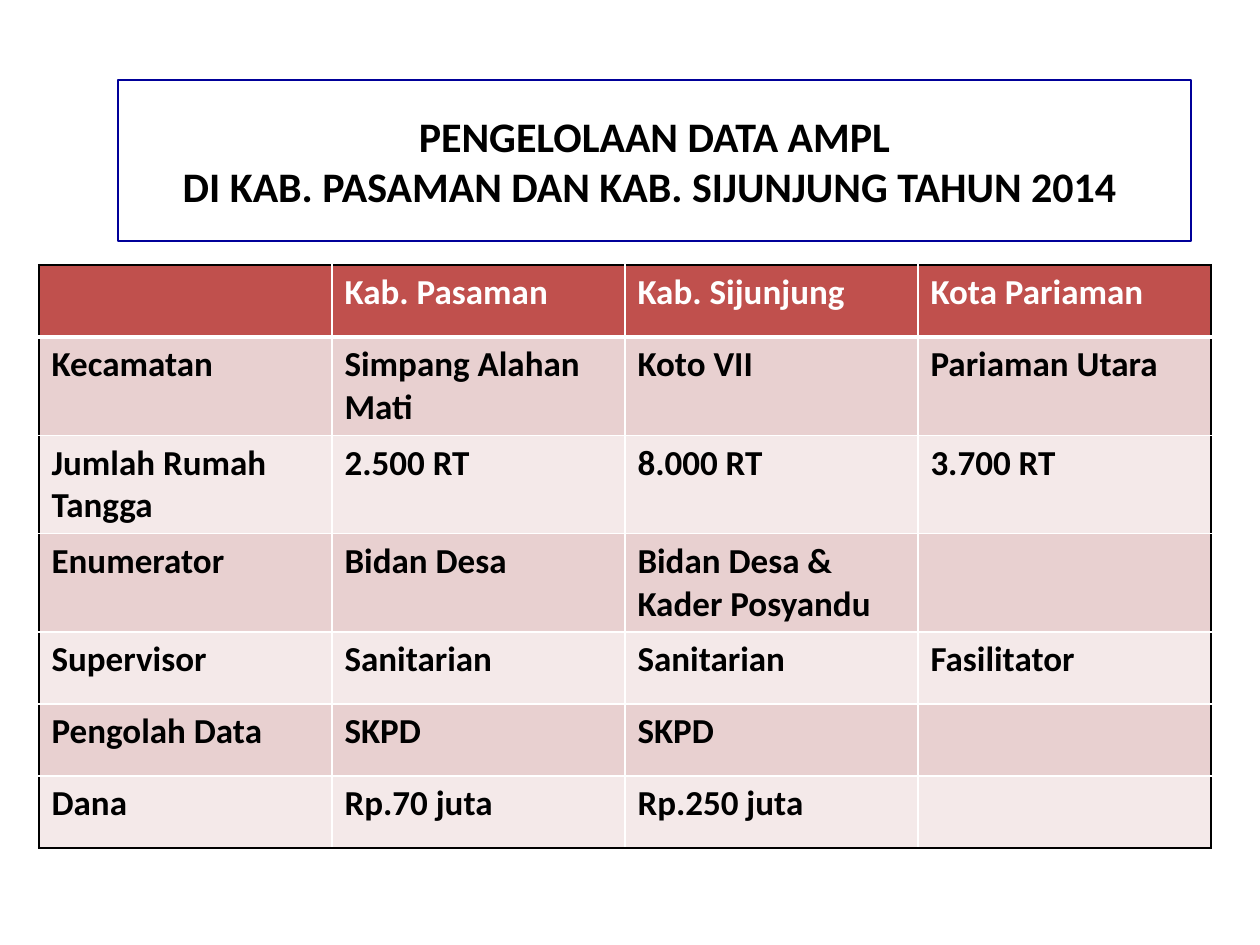
from dataclasses import dataclass

from pptx import Presentation
from pptx.dml.color import RGBColor
from pptx.enum.text import MSO_ANCHOR, MSO_AUTO_SIZE, PP_ALIGN
from pptx.oxml.ns import qn
from pptx.util import Emu, Pt
from lxml.etree import SubElement

EMU_PER_PX = 914400 / 126

WHITE = RGBColor(0xFF, 0xFF, 0xFF)
BLACK = RGBColor(0x00, 0x00, 0x00)
NAVY = RGBColor(0x00, 0x00, 0x99)
HEADER_RED = RGBColor(0xC0, 0x50, 0x4D)
DARK_BAND = RGBColor(0xE8, 0xD0, 0xD0)
LIGHT_BAND = RGBColor(0xF4, 0xE9, 0xE9)
FONT = "Calibri"

COLUMN_WIDTH = 293
TITLE_LINES = (
    "PENGELOLAAN DATA AMPL",
    "DI KAB. PASAMAN DAN KAB. SIJUNJUNG TAHUN 2014 ",
)


@dataclass(frozen=True)
class Row:
    texts: tuple[str, str, str, str]
    height: int = 72


@dataclass(frozen=True)
class Border:
    color: RGBColor
    points: float


ROWS = (
    Row(("", "Kab. Pasaman", "Kab. Sijunjung", "Kota Pariaman")),
    Row(("Kecamatan", "Simpang Alahan Mati", "Koto VII", "Pariaman Utara"), 77),
    Row(("Jumlah Rumah Tangga", "2.500 RT", "8.000 RT", "3.700 RT")),
    Row(("Enumerator", "Bidan Desa", "Bidan Desa & Kader Posyandu", "")),
    Row(("Supervisor", "Sanitarian", "Sanitarian", "Fasilitator")),
    Row(("Pengolah Data", "SKPD", "SKPD", "")),
    Row(("Dana", "Rp.70 juta", "Rp.250 juta", "")),
)

OUTER = Border(BLACK, 1.5)
INNER = Border(WHITE, 1)
HEADER_RULE = Border(WHITE, 3)


def px(length: int) -> Emu:
    return Emu(round(length * EMU_PER_PX))


def add_text(paragraph, text: str, size: int, color: RGBColor) -> None:
    run = paragraph.add_run()
    run.text = text
    run.font.name = FONT
    run.font.size = Pt(size)
    run.font.bold = True
    run.font.color.rgb = color


def set_border(cell, side: str, border: Border) -> None:
    """Add one cell edge; call in the order L, R, T, B and before the fill."""
    properties = cell._tc.get_or_add_tcPr()
    line = SubElement(properties, qn(f"a:ln{side}"), w=str(Pt(border.points)))
    fill = SubElement(line, qn("a:solidFill"))
    SubElement(fill, qn("a:srgbClr"), val=str(border.color))


def draw_title(slide) -> None:
    """Shape the title placeholder as a pill and write the title in it."""
    title = slide.shapes.title
    title.left, title.top = px(118), px(80)
    title.width, title.height = px(1073), px(161)
    geometry = SubElement(title._element.spPr, qn("a:prstGeom"), prst="roundRect")
    adjustments = SubElement(geometry, qn("a:avLst"))
    SubElement(adjustments, qn("a:gd"), name="adj", fmla="val 50000")
    title.fill.solid()
    title.fill.fore_color.rgb = WHITE
    title.line.color.rgb = NAVY
    title.line.width = Pt(0.75)

    frame = title.text_frame
    frame.word_wrap = True
    frame.auto_size = MSO_AUTO_SIZE.NONE
    frame.vertical_anchor = MSO_ANCHOR.MIDDLE
    for index, text in enumerate(TITLE_LINES):
        paragraph = frame.add_paragraph() if index else frame.paragraphs[0]
        paragraph.alignment = PP_ALIGN.CENTER
        add_text(paragraph, text, 24, BLACK)


def draw_cell(cell, text: str, row: int, column: int) -> None:
    last_row, last_column = len(ROWS) - 1, len(ROWS[0].texts) - 1
    is_header = row == 0
    bottom = HEADER_RULE if is_header else OUTER if row == last_row else INNER
    top = OUTER if is_header else HEADER_RULE if row == 1 else INNER
    set_border(cell, "L", OUTER if column == 0 else INNER)
    set_border(cell, "R", OUTER if column == last_column else INNER)
    set_border(cell, "T", top)
    set_border(cell, "B", bottom)
    cell.fill.solid()
    band = DARK_BAND if row % 2 else LIGHT_BAND
    cell.fill.fore_color.rgb = HEADER_RED if is_header else band
    if text:
        color = WHITE if is_header else BLACK
        add_text(cell.text_frame.paragraphs[0], text, 20, color)


def draw_table(slide) -> None:
    column_count = len(ROWS[0].texts)
    table = slide.shapes.add_table(
        len(ROWS), column_count, px(39), px(265),
        px(COLUMN_WIDTH * column_count), px(sum(row.height for row in ROWS)),
    ).table
    for column in table.columns:
        column.width = px(COLUMN_WIDTH)
    for row_index, row in enumerate(ROWS):
        table.rows[row_index].height = px(row.height)
        for column_index, text in enumerate(row.texts):
            cell = table.cell(row_index, column_index)
            draw_cell(cell, text, row_index, column_index)


def main() -> None:
    presentation = Presentation()
    presentation.slide_width, presentation.slide_height = px(1260), px(945)
    slide = presentation.slides.add_slide(presentation.slide_layouts[5])
    draw_title(slide)
    draw_table(slide)
    presentation.save("out.pptx")


if __name__ == "__main__":
    main()
